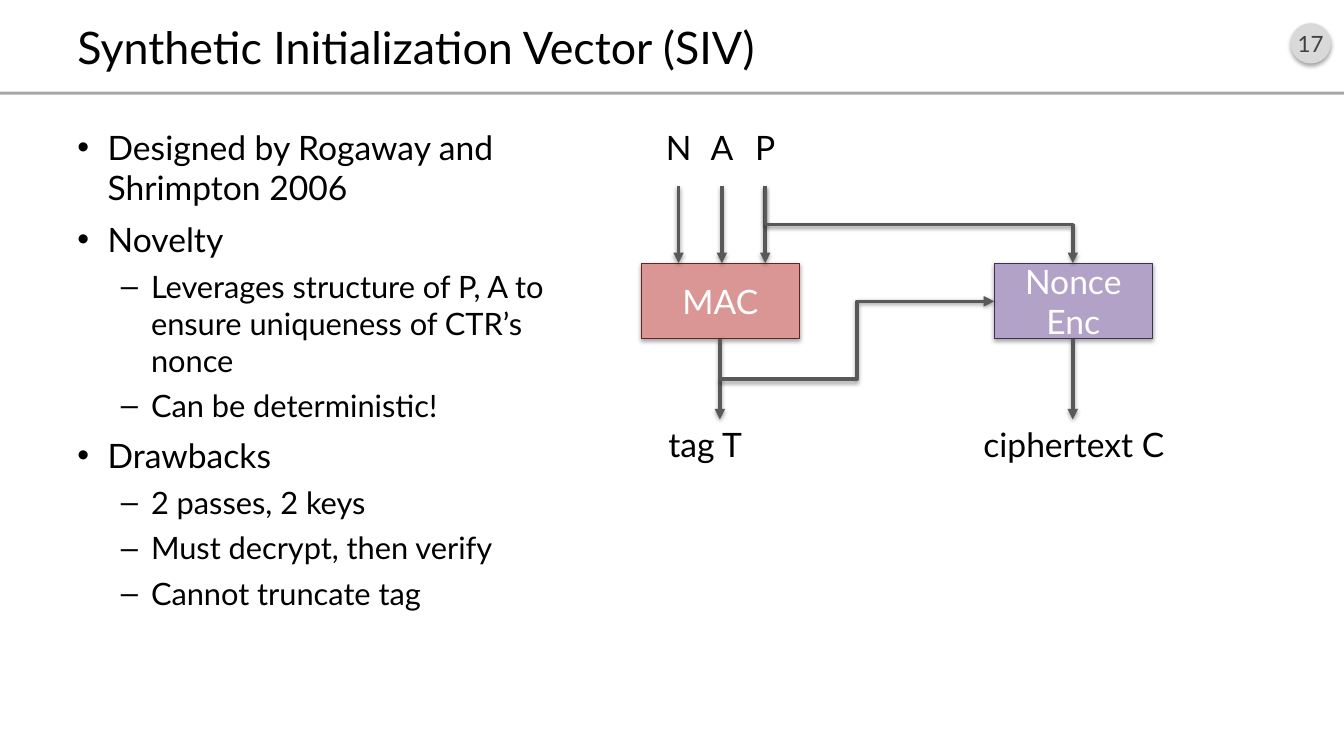
from dataclasses import dataclass

from lxml import etree
from pptx import Presentation
from pptx.dml.color import RGBColor
from pptx.enum.shapes import MSO_CONNECTOR, MSO_SHAPE
from pptx.enum.text import MSO_ANCHOR, MSO_AUTO_SIZE, PP_ALIGN
from pptx.oxml.ns import qn
from pptx.util import Inches, Pt

RECTANGLE = MSO_SHAPE.RECTANGLE
OVAL = MSO_SHAPE.OVAL
STRAIGHT = MSO_CONNECTOR.STRAIGHT
ELBOW = MSO_CONNECTOR.ELBOW
LEFT = PP_ALIGN.LEFT
CENTER = PP_ALIGN.CENTER
TOP = MSO_ANCHOR.TOP
MIDDLE = MSO_ANCHOR.MIDDLE
FIT_TEXT = MSO_AUTO_SIZE.SHAPE_TO_FIT_TEXT


@dataclass(frozen=True)
class Theme:
    font: str = "Lato"
    text: str = "000000"
    light_text: str = "FFFFFF"
    badge_fill: str = "D9D9D9"
    badge_text: str = "404040"
    rule: str = "A6A6A6"
    arrow: str = "595959"
    mac_fill: str = "D99694"
    mac_line: str = "632523"
    enc_fill: str = "B3A2C7"
    enc_line: str = "403152"
    title_size: int = 32
    main_size: int = 24
    sub_size: int = 22
    badge_size: int = 16


def color(value):
    return RGBColor.from_string(value)


def add_child(parent, tag, **attributes):
    child = etree.SubElement(parent, qn(tag))
    for name, value in attributes.items():
        child.set(name, str(value))
    return child


def format_text(para, text, *, font, size, fill, align=LEFT):
    para.alignment = align
    span = para.add_run()
    span.text = text
    span.font.name = font
    span.font.size = Pt(size)
    span.font.color.rgb = color(fill)


def add_shadow(effects, opacity, distance):
    shadow = add_child(effects, "a:outerShdw", blurRad=Pt(3.1), dist=Pt(distance),
                       dir=90 * 60000, rotWithShape=0)
    tone = add_child(shadow, "a:srgbClr", val="000000")
    add_child(tone, "a:alpha", val=opacity * 1000)


class SlideBuilder:
    def __init__(self, page, theme):
        self.page = page
        self.theme = theme

    def put_text(self, para, text, size=None, fill=None, align=LEFT):
        format_text(para, text, font=self.theme.font, size=size or self.theme.main_size,
                    fill=fill or self.theme.text, align=align)

    def text_box(self, left, top, width, height, wrap=True, anchor=TOP):
        box = self.page.shapes.add_textbox(
            Inches(left), Inches(top), Inches(width), Inches(height))
        frame = box.text_frame
        frame.word_wrap = wrap
        frame.vertical_anchor = anchor
        return frame

    def title(self, text):
        frame = self.text_box(0.67, 0.16, 12, 0.6, anchor=MIDDLE)
        self.put_text(frame.paragraphs[0], text, size=self.theme.title_size)

    def label(self, text, left, top, width, height=0.5, align=CENTER):
        frame = self.text_box(left, top, width, height, wrap=False)
        frame.auto_size = FIT_TEXT
        self.put_text(frame.paragraphs[0], text, align=align)

    def bullets(self, items):
        frame = self.text_box(0.67, 1.21, 5.2, 5.75)
        styles = [("•", 0.3, 8, self.theme.main_size), ("–", 0.73, 6, self.theme.sub_size)]
        for index, (level, text) in enumerate(items):
            para = frame.add_paragraph() if index else frame.paragraphs[0]
            mark, margin, space, size = styles[level]
            para.level = level
            para.space_before = Pt(space)
            self.put_text(para, text, size=size)
            properties = para._p.get_or_add_pPr()
            properties.set("marL", str(Inches(margin)))
            properties.set("indent", str(Inches(-0.3)))
            add_child(properties, "a:buFont", typeface="Arial")
            add_child(properties, "a:buChar", char=mark)

    def block(self, kind, left, top, width, height, fill, line=None, shadow=True):
        shape = self.page.shapes.add_shape(
            kind, Inches(left), Inches(top), Inches(width), Inches(height))
        shape.fill.solid()
        shape.fill.fore_color.rgb = color(fill)
        if line:
            shape.line.color.rgb = color(line)
            shape.line.width = Pt(0.75)
        else:
            shape.line.fill.background()
        shape.shadow.inherit = False
        if shadow:
            add_shadow(shape.element.spPr.find(qn("a:effectLst")), 35, 1.8)
        shape.text_frame.word_wrap = True
        shape.text_frame.vertical_anchor = MIDDLE
        return shape.text_frame

    def cipher(self, text, left, top, fill, line):
        frame = self.block(RECTANGLE, left, top, 1.57, 0.75, fill, line)
        self.put_text(frame.paragraphs[0], text, fill=self.theme.light_text, align=CENTER)

    def badge(self, text):
        frame = self.block(OVAL, 12.8, 0.23, 0.4, 0.4, self.theme.badge_fill)
        frame.margin_left = frame.margin_right = 0
        self.put_text(frame.paragraphs[0], text, size=self.theme.badge_size,
                      fill=self.theme.badge_text, align=CENTER)

    def arrow(self, x1, y1, x2, y2, kind=STRAIGHT, vertical_first=False):
        if vertical_first:
            middle_x, middle_y = (x1 + x2) / 2, (y1 + y2) / 2
            half_x, half_y = (y2 - y1) / 2, (x2 - x1) / 2
            x1, x2 = middle_x + half_x, middle_x - half_x
            y1, y2 = middle_y - half_y, middle_y + half_y
        connector = self.page.shapes.add_connector(
            kind, Inches(x1), Inches(y1), Inches(x2), Inches(y2))
        connector.line.color.rgb = color(self.theme.arrow)
        connector.line.width = Pt(2.5)
        properties = connector.element.spPr
        if vertical_first:
            properties.find(qn("a:xfrm")).set("rot", str(270 * 60000))
        add_child(properties.find(qn("a:ln")), "a:tailEnd", type="triangle")
        add_shadow(add_child(properties, "a:effectLst"), 38, 1.6)


def main():
    deck = Presentation()
    deck.slide_width = Inches(13.33)
    deck.slide_height = Inches(7.5)
    theme = Theme()
    builder = SlideBuilder(deck.slides.add_slide(deck.slide_layouts[6]), theme)

    builder.badge("17")
    builder.block(RECTANGLE, 0, 0.91, 13.33, 0.03, theme.rule, shadow=False)
    builder.title("Synthetic Initialization Vector (SIV)")
    builder.bullets([
        (0, "Designed by Rogaway and Shrimpton 2006"),
        (0, "Novelty"),
        (1, "Leverages structure of P, A to ensure uniqueness of CTR’s nonce"),
        (1, "Can be deterministic!"),
        (0, "Drawbacks"),
        (1, "2 passes, 2 keys"),
        (1, "Must decrypt, then verify"),
        (1, "Cannot truncate tag"),
    ])

    input_top, block_top, block_bottom, output_top = 1.85, 2.61, 3.36, 4.16
    mac_left, enc_left = 6.36, 9.86
    mac_center, enc_center = 7.14, 10.64
    builder.cipher("MAC", mac_left, block_top, theme.mac_fill, theme.mac_line)
    builder.cipher("Nonce Enc", enc_left, block_top, theme.enc_fill, theme.enc_line)

    for text, center, width in [("N", 6.73, 0.59), ("A", 7.16, 0.56), ("P", 7.59, 0.53)]:
        builder.label(text, center - width / 2, 1.21, width, 0.64)
        builder.arrow(center, input_top, center, block_top)
    for center in (mac_center, enc_center):
        builder.arrow(center, block_bottom, center, output_top)

    builder.arrow(mac_center, 3.76, enc_left, 2.99, ELBOW)
    builder.arrow(7.59, input_top, enc_center, block_top, ELBOW, vertical_first=True)
    builder.label("tag T", 6.53, output_top, 1.23, 0.64, align=LEFT)
    builder.label("ciphertext C", 9.64, output_top, 2.02)

    deck.save("out.pptx")


if __name__ == "__main__":
    main()
